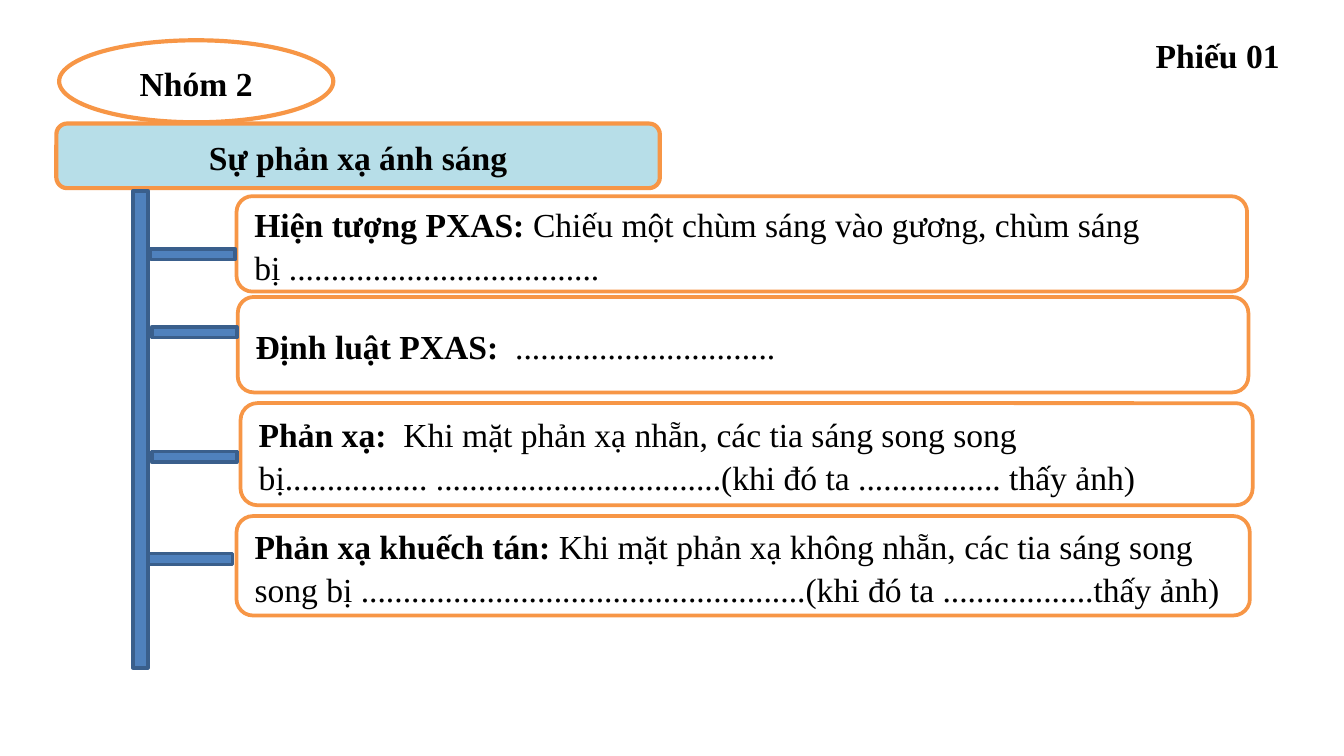
from dataclasses import dataclass

from pptx import Presentation
from pptx.dml.color import RGBColor
from pptx.enum.shapes import MSO_SHAPE as Shape
from pptx.enum.text import MSO_ANCHOR as Anchor, PP_ALIGN as Align
from pptx.util import Pt

COLORS = {
    "text": "000000",
    "paper": "FFFFFF",
    "title": "B7DEE8",
    "frame": "F79646",
    "bar": "4F81BD",
    "bar_line": "3A5F8C",
}
FONT = "Times New Roman"
FONT_SIZE = 18
BRANCH_W, BRANCH_H = 45.4, 5.8


@dataclass
class Box:
    left: float
    top: float
    width: float
    height: float


@dataclass
class Topic:
    box: Box
    branch_left: float
    branch_top: float
    heading: str
    body: str


TOPICS = [
    Topic(Box(126.7, 105.1, 541.4, 51.1), 80.6, 133.2, "Hiện tượng PXAS: ",
          "Chiếu một chùm sáng vào gương, chùm sáng bị " + "." * 37),
    Topic(Box(127.4, 159.1, 541.4, 51.1), 81.4, 175, "Định luật PXAS:  ",
          "." * 31),
    Topic(Box(128.9, 216, 542.2, 54.7), 81.4, 241.9, "Phản xạ:  ",
          "Khi mặt phản xạ nhẵn, các tia sáng song song bị" + "." * 17 + " "
          + "." * 34 + "(khi đó ta " + "." * 17 + " thấy ảnh)"),
    Topic(Box(126.7, 276.5, 542.9, 53.3), 79.2, 296.6, "Phản xạ khuếch tán: ",
          "Khi mặt phản xạ không nhẵn, các tia sáng song song bị " + "." * 53
          + "(khi đó ta " + "." * 18 + "thấy ảnh)"),
]


def rgb(name: str) -> RGBColor:
    return RGBColor.from_string(COLORS[name])


def add_run(p, text: str, bold: bool) -> None:
    r = p.add_run()
    r.text = text
    r.font.name = FONT
    r.font.size = Pt(FONT_SIZE)
    r.font.bold = bold
    r.font.color.rgb = rgb("text")


def add_block(s, kind: Shape, box: Box, fill: str, line: str, weight: float):
    sp = s.shapes.add_shape(kind, Pt(box.left), Pt(box.top),
                            Pt(box.width), Pt(box.height))
    sp.shadow.inherit = False
    sp.fill.solid()
    sp.fill.fore_color.rgb = rgb(fill)
    sp.line.color.rgb = rgb(line)
    sp.line.width = Pt(weight)
    return sp


def add_bar(s, box: Box) -> None:
    add_block(s, Shape.RECTANGLE, box, "bar", "bar_line", 2)


def add_label(s, kind: Shape, box: Box, fill: str, weight: float,
              align: Align, heading: str, body: str = "") -> None:
    sp = add_block(s, kind, box, fill, "frame", weight)
    tf = sp.text_frame
    tf.word_wrap = True
    tf.vertical_anchor = Anchor.MIDDLE
    p = tf.paragraphs[0]
    p.alignment = align
    p.line_spacing = 1.07
    p.space_after = Pt(8)
    add_run(p, heading, True)
    if body:
        add_run(p, body, False)


prs = Presentation()
prs.slide_width, prs.slide_height = Pt(720), Pt(405)
s = prs.slides.add_slide(prs.slide_layouts[6])

# Title and the spine below it
add_label(s, Shape.ROUNDED_RECTANGLE, Box(30.2, 66.2, 323.3, 34.6), "title",
          2.25, Align.CENTER, "Sự phản xạ ánh sáng")
add_bar(s, Box(71.3, 102.2, 7.9, 255.6))

# Topics, then the branches that join them to the spine
for t in TOPICS:
    add_label(s, Shape.ROUNDED_RECTANGLE, t.box, "paper", 2, Align.LEFT,
              t.heading, t.body)
for t in TOPICS:
    add_bar(s, Box(t.branch_left, t.branch_top, BRANCH_W, BRANCH_H))

# Group name
add_label(s, Shape.OVAL, Box(31.7, 21.6, 146.9, 43.9), "paper", 2.25,
          Align.CENTER, "Nhóm 2")

# Sheet number
sheet = s.shapes.add_textbox(Pt(612), Pt(15.1), Pt(90), Pt(28.8))
sheet.text_frame.word_wrap = True
add_run(sheet.text_frame.paragraphs[0], "Phiếu 01", True)

prs.save("out.pptx")
